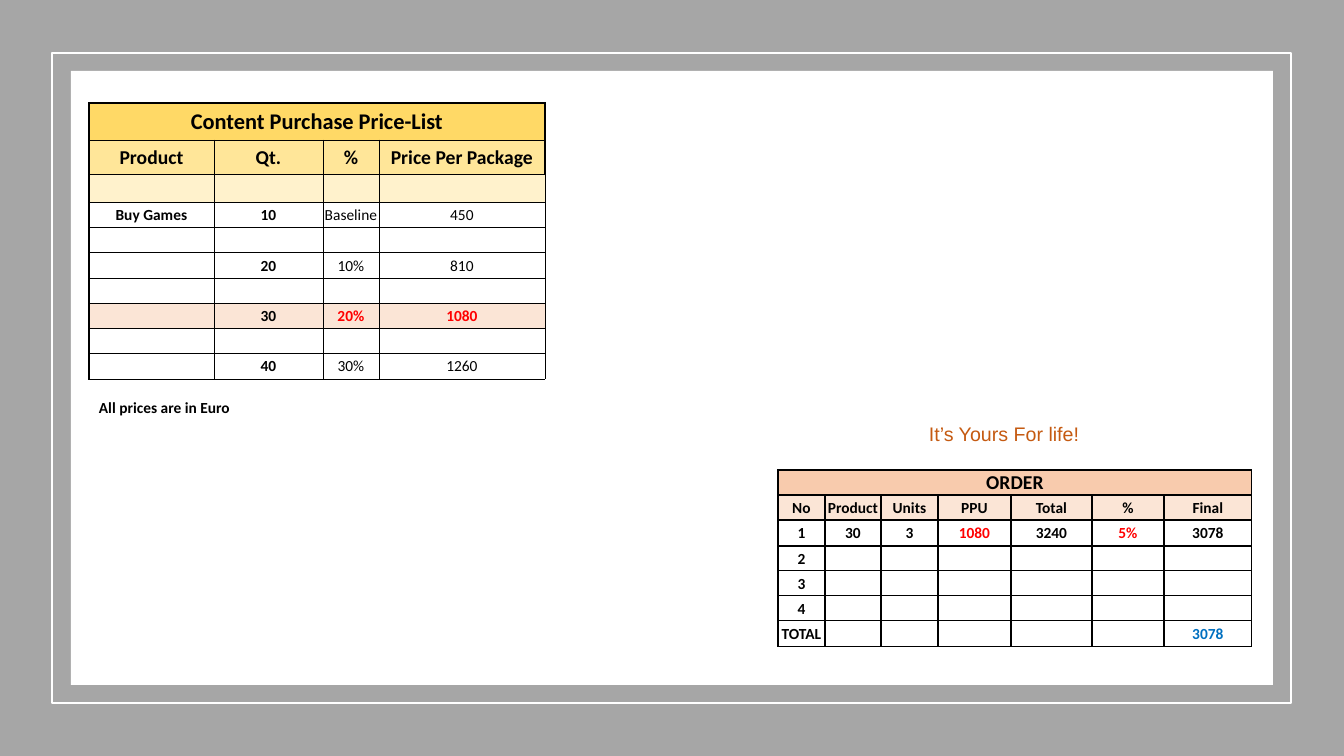
from lxml.etree import SubElement
from pptx import Presentation
from pptx.dml.color import RGBColor
from pptx.enum.shapes import MSO_SHAPE
from pptx.enum.text import MSO_ANCHOR, PP_ALIGN
from pptx.oxml.ns import qn
from pptx.util import Emu, Pt

SLIDE_WIDTH, SLIDE_HEIGHT = 1344, 756
EMU_PER_PX = 12192000 / SLIDE_WIDTH

GREY = RGBColor(0xA6, 0xA6, 0xA6)
WHITE = RGBColor(0xFF, 0xFF, 0xFF)
BLACK = RGBColor(0x00, 0x00, 0x00)
RED = RGBColor(0xFF, 0x00, 0x00)
BLUE = RGBColor(0x00, 0x70, 0xC0)
ORANGE = RGBColor(0xC5, 0x5A, 0x11)
GOLD = RGBColor(0xFF, 0xD9, 0x66)
LIGHT_GOLD = RGBColor(0xFF, 0xE6, 0x99)
CREAM = RGBColor(0xFF, 0xF2, 0xCC)
PEACH = RGBColor(0xF8, 0xCB, 0xAD)
LIGHT_PEACH = RGBColor(0xFB, 0xE5, 0xD6)

BODY_ROWS = [25, 25, 26, 25, 25, 25, 26]
PRICE_TEXTS = [
    ["Content Purchase Price-List", "", "", ""],
    ["Product", "Qt.", "%", "Price Per Package"],
    ["", "", "", ""],
    ["Buy Games", "10", "Baseline", "450"],
    ["", "", "", ""],
    ["", "20", "10%", "810"],
    ["", "", "", ""],
    ["", "30", "20%", "1080"],
    ["", "", "", ""],
    ["", "40", "30%", "1260"],
]
ORDER_TEXTS = [
    ["ORDER", "", "", "", "", "", ""],
    ["No", "Product", "Units", "PPU", "Total", "%", "Final"],
    ["1", "30", "3", "1080", "3240", "5%", "3078"],
    ["2", "", "", "", "", "", ""],
    ["3", "", "", "", "", "", ""],
    ["4", "", "", "", "", "", ""],
    ["TOTAL", "", "", "", "", "", "3078"],
]


def px(length):
    return Emu(round(length * EMU_PER_PX))


def add_run(paragraph, text, size, color=BLACK, bold=False, font="Calibri"):
    run = paragraph.add_run()
    run.text = text
    run.font.name = font
    run.font.size = Pt(size)
    run.font.bold = bold
    run.font.color.rgb = color


def add_rectangle(slide, box, fill=None, line=None):
    shape = slide.shapes.add_shape(MSO_SHAPE.RECTANGLE, *map(px, box))
    shape.shadow.inherit = False
    if fill is None:
        shape.fill.background()
    else:
        shape.fill.solid()
        shape.fill.fore_color.rgb = fill
    if line is None:
        shape.line.fill.background()
    else:
        shape.line.color.rgb = line
        shape.line.width = Pt(2)


def add_label(slide, box, text, size, **style):
    text_frame = slide.shapes.add_textbox(*map(px, box)).text_frame
    text_frame.word_wrap = True
    add_run(text_frame.paragraphs[0], text, size, **style)


def set_borders(cell, widths):
    properties = cell._tc.get_or_add_tcPr()
    for side, width in zip("LRTB", widths):
        line = SubElement(properties, qn(f"a:ln{side}"), w=str(Pt(width)))
        fill = SubElement(line, qn("a:solidFill"))
        SubElement(fill, qn("a:srgbClr"), val=str(BLACK))


def set_margins(cell, left, top, right, bottom):
    cell.margin_left, cell.margin_top = px(left), px(top)
    cell.margin_right, cell.margin_bottom = px(right), px(bottom)


def add_grid(slide, left, top, columns, rows, texts, sizes, fills,
             borders, colors, regular=()):
    """Sizes and fills go by row; colors and regular go by (row, column)."""
    table = slide.shapes.add_table(
        len(rows), len(columns), px(left), px(top), px(sum(columns)), px(sum(rows))
    ).table
    table.first_row = table.horz_banding = False
    for column, width in zip(table.columns, columns):
        column.width = px(width)
    for row, height in zip(table.rows, rows):
        row.height = px(height)

    for row, row_texts in enumerate(texts):
        size = sizes.get(row, 11)
        for column, text in enumerate(row_texts):
            place = (row, column)
            cell = table.cell(row, column)
            set_borders(cell, borders(row, column))
            if row in fills:
                cell.fill.solid()
                cell.fill.fore_color.rgb = fills[row]
            else:
                cell.fill.background()
            set_margins(cell, 1, 1, 1, 0)
            cell.vertical_anchor = MSO_ANCHOR.MIDDLE
            paragraph = cell.text_frame.paragraphs[0]
            paragraph.alignment = PP_ALIGN.CENTER
            if text:
                add_run(paragraph, text, size, colors.get(place, BLACK),
                        place not in regular)
            else:
                SubElement(paragraph._p, qn("a:endParaRPr"), sz=str(size * 100))
    table.cell(0, 0).merge(table.cell(0, len(columns) - 1))
    return table


def price_borders(row, column):
    left = 1 if column == 0 or row == 0 else 0.25
    right = 1 if row == 0 or (row == 1 and column == 3) else 0.25
    above = 1 if row <= 2 else 0.5
    below = 1 if row <= 1 else 0.5
    return left, right, above, below


def order_borders(row, column):
    return 1, 1, 1, 1


def draw_frame(slide, width, height):
    add_rectangle(slide, (0, 0, width, height), fill=GREY)
    add_rectangle(slide, (52, 53, width - 105, height - 106), line=WHITE)
    add_rectangle(slide, (71, 71, width - 142, height - 142), fill=WHITE)


def draw_price_list(slide, left, top):
    table = add_grid(
        slide, left, top, [125, 109, 56, 166], [36, 34, 28] + BODY_ROWS,
        PRICE_TEXTS, {0: 16, 1: 14},
        {0: GOLD, 1: LIGHT_GOLD, 2: CREAM, 7: LIGHT_PEACH},
        price_borders, {(7, 2): RED, (7, 3): RED},
        {(row, column) for row in (3, 5, 9) for column in (2, 3)},
    )
    set_margins(table.cell(0, 0), 9, 5, 9, 5)
    add_label(slide, (left, top + 290, 244, 29), "All prices are in Euro", 11, bold=True)


def draw_order(slide, left, top):
    add_label(slide, (left + 141, top - 53, 335, 34), "It’s Yours For life!", 14,
              color=ORANGE, font="Arial")
    add_grid(
        slide, left, top, [47, 56, 57, 73, 81, 72, 88], BODY_ROWS,
        ORDER_TEXTS, {0: 14}, {0: PEACH, 1: LIGHT_PEACH},
        order_borders, {(2, 3): RED, (2, 5): RED, (6, 6): BLUE},
    )


def main():
    presentation = Presentation()
    presentation.slide_width = px(SLIDE_WIDTH)
    presentation.slide_height = px(SLIDE_HEIGHT)
    slide = presentation.slides.add_slide(presentation.slide_layouts[6])
    draw_frame(slide, SLIDE_WIDTH, SLIDE_HEIGHT)
    draw_price_list(slide, 89, 103)
    draw_order(slide, 778, 470)
    presentation.save("out.pptx")


if __name__ == "__main__":
    main()
